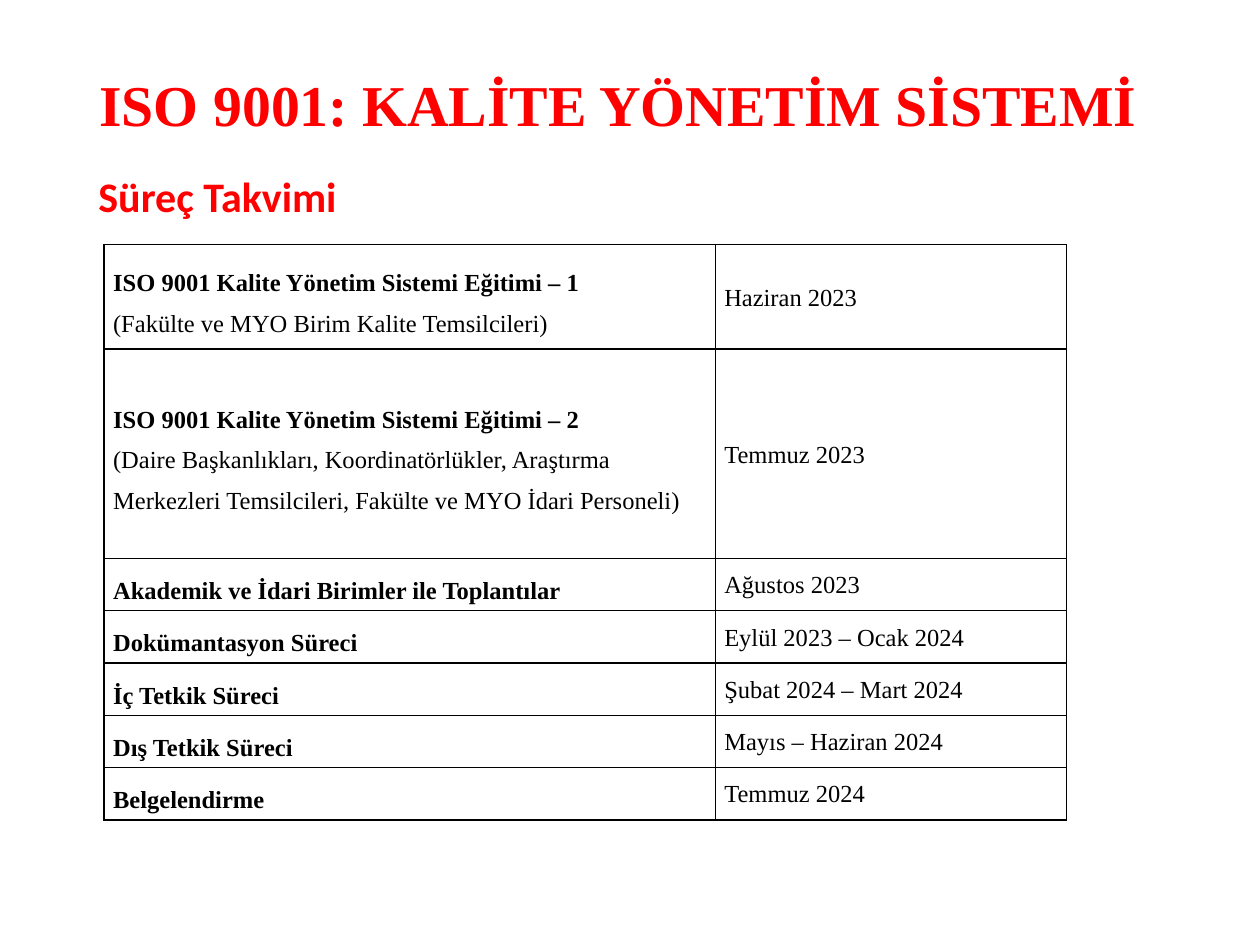
from dataclasses import dataclass

from lxml.etree import SubElement
from pptx import Presentation
from pptx.dml.color import RGBColor
from pptx.enum.text import MSO_ANCHOR as Anchor, MSO_AUTO_SIZE as AutoSize, PP_ALIGN as Align
from pptx.oxml import parse_xml
from pptx.oxml.ns import nsdecls, qn
from pptx.util import Cm, Pt


@dataclass(frozen=True)
class Theme:
    accent: str = "FF0000"
    ink: str = "000000"
    serif: str = "Times New Roman"
    sans: str = "Calibri"
    title_size: float = 33
    subtitle_size: float = 24
    table_size: float = 14
    border_width: float = 1


THEME = Theme()

# Step, participants (if any), date, height in row units
SCHEDULE = [
    ("ISO 9001 Kalite Yönetim Sistemi Eğitimi – 1",
     "(Fakülte ve MYO Birim Kalite Temsilcileri)", "Haziran 2023", 2),
    ("ISO 9001 Kalite Yönetim Sistemi Eğitimi – 2",
     "(Daire Başkanlıkları, Koordinatörlükler, Araştırma Merkezleri Temsilcileri, "
     "Fakülte ve MYO İdari Personeli)", "Temmuz 2023", 4),
    ("Akademik ve İdari Birimler ile Toplantılar", "", "Ağustos 2023", 1),
    ("Dokümantasyon Süreci", "", "Eylül 2023 – Ocak 2024", 1),
    ("İç Tetkik Süreci", "", "Şubat 2024 – Mart 2024", 1),
    ("Dış Tetkik Süreci", "", "Mayıs – Haziran 2024", 1),
    ("Belgelendirme", "", "Temmuz 2024", 1),
]


def add_run(paragraph, text, font, size, color, bold):
    run = paragraph.add_run()
    run.text = text
    run.font.name = font
    run.font.size = Pt(size)
    run.font.bold = bold
    run.font.color.rgb = RGBColor.from_string(color)


def fill_heading(placeholder, box, text, font, size, anchor):
    """Place a title or body placeholder in box and write one unbulleted line."""
    placeholder.left, placeholder.top, placeholder.width, placeholder.height = box
    frame = placeholder.text_frame
    frame.word_wrap = True
    frame.auto_size = AutoSize.NONE
    frame.vertical_anchor = anchor
    heading = frame.paragraphs[0]
    heading.alignment = Align.LEFT
    heading.line_spacing = 0.9
    add_run(heading, text, font, size, THEME.accent, True)
    return heading


def remove_bullet(paragraph):
    properties = paragraph._p.get_or_add_pPr()
    properties.set("marL", "0")
    properties.set("indent", "0")
    SubElement(properties, qn("a:buNone"))


def add_borders(cell):
    properties = cell._tc.get_or_add_tcPr()
    for position, side in enumerate(("lnL", "lnR", "lnT", "lnB")):
        properties.insert(position, parse_xml(
            f'<a:{side} {nsdecls("a")} w="{Pt(THEME.border_width)}"><a:solidFill>'
            f'<a:srgbClr val="{THEME.ink}"/></a:solidFill></a:{side}>'))


def fill_cell(cell, lines, line_spacing):
    """Write (text, bold) lines, one paragraph each."""
    cell.fill.background()
    add_borders(cell)
    cell.vertical_anchor = Anchor.MIDDLE
    cell.margin_left = cell.margin_right = Cm(0.18)
    cell.margin_top = cell.margin_bottom = 0
    frame = cell.text_frame
    for index, (text, bold) in enumerate(lines):
        paragraph = frame.add_paragraph() if index else frame.paragraphs[0]
        paragraph.line_spacing = line_spacing
        add_run(paragraph, text, THEME.serif, THEME.table_size, THEME.ink, bold)


def add_schedule(slide, box):
    left, top, width, height = box
    table = slide.shapes.add_table(len(SCHEDULE), 2, left, top, width, height).table
    table.first_row = table.horz_banding = False
    step_width = Cm(12.32)
    table.columns[0].width = step_width
    table.columns[1].width = width - step_width
    unit = height // sum(units for *_, units in SCHEDULE)
    for index, (step, participants, date, units) in enumerate(SCHEDULE):
        table.rows[index].height = unit * units
        step_lines = [(step, True)]
        if participants:
            step_lines.append((participants, False))
        fill_cell(table.cell(index, 0), step_lines, 1.5)
        fill_cell(table.cell(index, 1), [(date, False)], 1.07)


def main():
    deck = Presentation()
    deck.slide_width, deck.slide_height = Cm(25.4), Cm(19.05)
    slide = deck.slides.add_slide(deck.slide_layouts[1])
    title, subtitle = slide.placeholders
    fill_heading(title, (Cm(1.75), Cm(1.02), Cm(21.9), Cm(2.31)),
                 "ISO 9001: KALİTE YÖNETİM SİSTEMİ",
                 THEME.serif, THEME.title_size, Anchor.MIDDLE)
    calendar = fill_heading(subtitle, (Cm(1.73), Cm(3.43), Cm(21.41), Cm(1.12)),
                            "Süreç Takvimi",
                            THEME.sans, THEME.subtitle_size, Anchor.TOP)
    calendar.space_before = Pt(7.5)
    remove_bullet(calendar)
    add_schedule(slide, (Cm(2.1), Cm(4.93), Cm(19.4), Cm(11.6)))
    deck.save("out.pptx")


if __name__ == "__main__":
    main()
